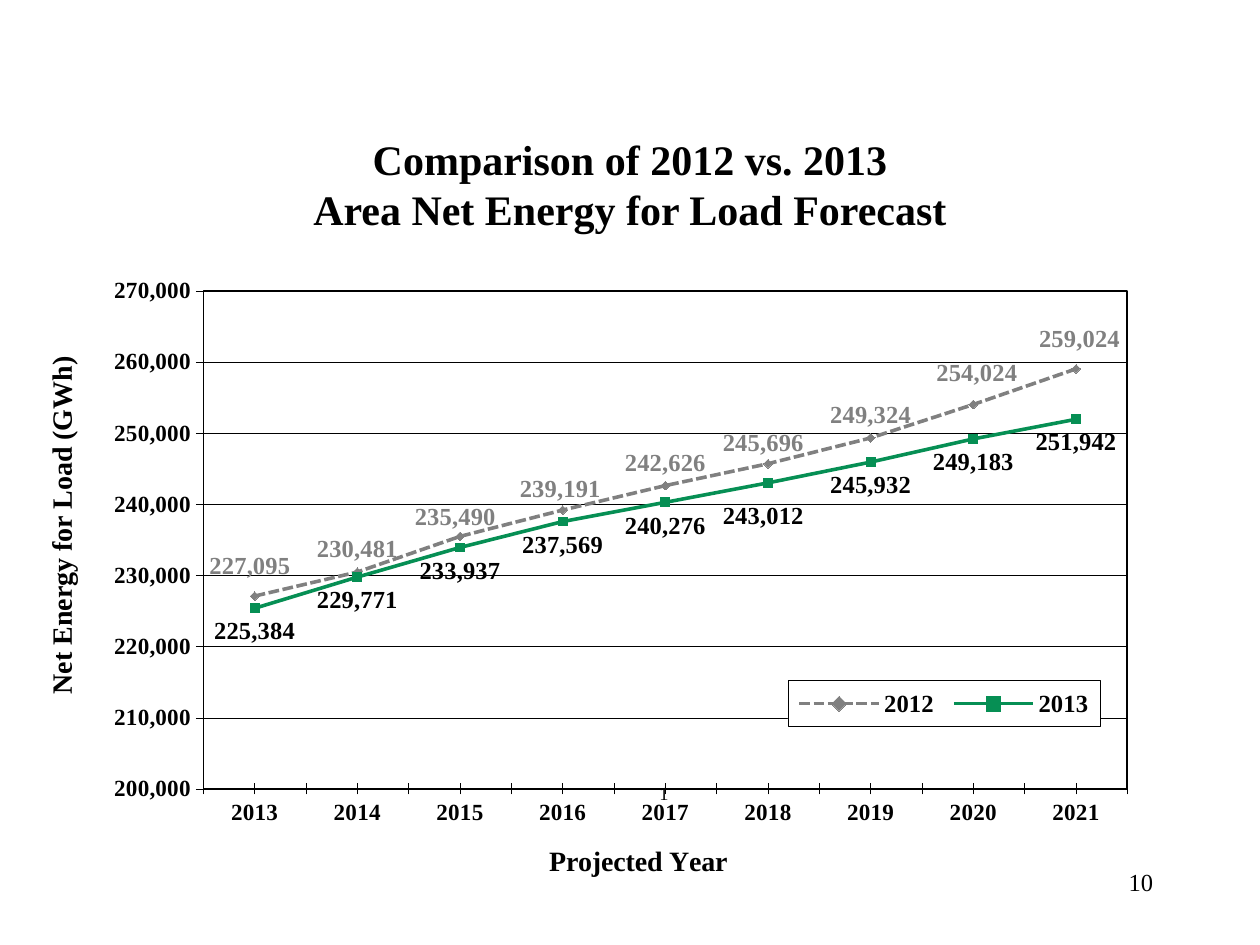
import pptx
import pptx.chart.data
import pptx.dml.color
import pptx.enum.chart
import pptx.enum.dml
import pptx.enum.text
import pptx.oxml
import pptx.oxml.ns
import pptx.util
from pptx.util import Inches, Pt

FONT = "Times New Roman"
HUES = {"ink": "000000", "gray": "808080", "green": "068F54", "page": "FFFFFF"}
enum = pptx.enum.chart
ALIGN = pptx.enum.text.PP_ALIGN
YEARS = [str(year) for year in range(2013, 2022)]
LINES = [
    {"name": "2012", "hue": "gray", "text": "gray", "mark": "DIAMOND",
     "dash": "SQUARE_DOT", "side": "ABOVE",
     "vals": [227095, 230481, 235490, 239191, 242626, 245696, 249324, 254024, 259024],
     "moves": {0: (-0.004, -0.01), 2: (-0.004, 0.005), 3: (-0.002, 0.003),
               5: (-0.004, 0.003), 7: (0.003, -0.013), 8: (0.003, -0.01)}},
    {"name": "2013", "hue": "green", "text": "ink", "mark": "SQUARE",
     "dash": "SOLID", "side": "BELOW",
     "vals": [225384, 229771, 233937, 237569, 240276, 243012, 245932, 249183, 251942],
     "moves": {5: (-0.004, 0.015)}},
]
TEXTS = [
    {"text": "Comparison of 2012 vs. 2013\vArea Net Energy for Load Forecast",
     "at": (0, 1.06, 10, 1.14), "size": 24, "bold": True, "align": ALIGN.CENTER,
     "top": 0},
    {"text": "10", "at": (7.17, 6.83, 2.08, 0.5), "size": 14, "align": ALIGN.RIGHT},
    {"text": "Net Energy for Load (GWh)", "at": (0.3, 2.7, 0.55, 2.94), "size": 16,
     "bold": True, "align": ALIGN.CENTER, "turn": "vert270"},
    {"text": "1", "at": (1.58, 6.16, 7.38, 0.29), "size": 10.5, "align": ALIGN.CENTER},
]


def color(name):
    return pptx.dml.color.RGBColor.from_string(HUES[name])


def style(font, size, hue="ink", bold=True):
    font.name, font.size, font.bold = FONT, Pt(size), bold
    font.color.rgb = color(hue)


def stroke(line, width, hue="ink"):
    line.color.rgb = color(hue)
    line.width = Pt(width)


def fill(form, hue):
    form.fill.solid()
    form.fill.fore_color.rgb = color(hue)


def place(node, after, edge=True, inner=False, **spots):
    for old in node.findall(pptx.oxml.ns.qn("c:layout")):
        node.remove(old)
    tags = '<c:layoutTarget val="inner"/>' if inner else ""
    if edge:
        tags += '<c:xMode val="edge"/><c:yMode val="edge"/>'
    tags += "".join(f'<c:{key} val="{val}"/>' for key, val in spots.items())
    space = pptx.oxml.ns.nsdecls("c")
    layout = pptx.oxml.parse_xml(
        f"<c:layout {space}><c:manualLayout>{tags}</c:manualLayout></c:layout>")
    if after:
        node.find(pptx.oxml.ns.qn(after)).addnext(layout)
    else:
        node.insert(0, layout)


def frame(node, width, after=None, hue=None):
    paint = f'<a:solidFill><a:srgbClr val="{HUES[hue]}"/></a:solidFill>' if hue else "<a:noFill/>"
    shape = pptx.oxml.parse_xml(
        f'<c:spPr {pptx.oxml.ns.nsdecls("c", "a")}>{paint}<a:ln w="{Pt(width)}">'
        f'<a:solidFill><a:srgbClr val="{HUES["ink"]}"/></a:solidFill></a:ln></c:spPr>')
    if after:
        node.find(pptx.oxml.ns.qn(after)).addnext(shape)
    else:
        node.append(shape)


def write(slide, item):
    box = slide.shapes.add_textbox(*map(Inches, item["at"]))
    body = box.text_frame
    body.word_wrap = True
    body.margin_top = Inches(item.get("top", 0.05))
    if "turn" in item:
        body._txBody.bodyPr.set("vert", item["turn"])
    para = body.paragraphs[0]
    para.text = item["text"]
    para.alignment = item["align"]
    style(para.font, item["size"], bold=item.get("bold", False))


def draw(series, item):
    series.smooth = False
    stroke(series.format.line, 2.05, item["hue"])
    series.format.line.dash_style = pptx.enum.dml.MSO_LINE[item["dash"]]
    mark = series.marker
    mark.style, mark.size = enum.XL_MARKER_STYLE[item["mark"]], 5
    fill(mark.format, item["hue"])
    stroke(mark.format.line, 0.75, item["hue"])
    side = enum.XL_LABEL_POSITION[item["side"]]
    labels = series.data_labels
    labels.show_value = True
    labels.number_format, labels.number_format_is_linked = "#,##0", False
    labels.position = side
    style(labels.font, 14, item["text"])
    for leader in labels._element.xpath("c:showLeaderLines"):
        leader.set("val", "0")
    for index, (left, top) in item["moves"].items():
        label = series.points[index].data_label
        style(label.font, 14, item["text"])
        label.position = side
        node = labels._element.xpath(f'c:dLbl[c:idx/@val="{index}"]')[0]
        place(node, "c:idx", edge=False, x=left, y=top)


def plot(slide):
    data = pptx.chart.data.CategoryChartData(number_format="#,##0")
    data.categories = YEARS
    for item in LINES:
        data.add_series(item["name"], item["vals"])
    at = map(Inches, (-0.17, 2.1, 9.39, 5.21))
    chart = slide.shapes.add_chart(enum.XL_CHART_TYPE.LINE_MARKERS, *at, data).chart
    style(chart.font, 18.5)
    chart.has_title = False
    chart.plots[0].vary_by_categories = False
    for series, item in zip(chart.plots[0].series, LINES):
        draw(series, item)

    years, loads = chart.category_axis, chart.value_axis
    for axis in (years, loads):
        style(axis.tick_labels.font, 13.2)
        stroke(axis.format.line, 0.25)
    years.major_tick_mark = enum.XL_TICK_MARK.NONE
    years.minor_tick_mark = enum.XL_TICK_MARK.CROSS
    years.has_major_gridlines = False
    title = years.axis_title
    title.text_frame.text = "Projected Year"
    style(title.text_frame.paragraphs[0].font, 16)
    place(title._element, "c:tx", x=0.478, y=0.873)

    loads.minimum_scale, loads.maximum_scale, loads.major_unit = 200000, 270000, 10000
    loads.major_tick_mark = enum.XL_TICK_MARK.OUTSIDE
    loads.tick_labels.number_format = "#,##0"
    loads.tick_labels.number_format_is_linked = False
    loads.has_major_gridlines = True
    stroke(loads.major_gridlines.format.line, 0.25)

    chart.has_legend = True
    legend = chart.legend
    legend.position = enum.XL_LEGEND_POSITION.RIGHT
    legend.include_in_layout = False
    style(legend.font, 14.1)
    place(legend._element, "c:legendPos", x=0.684, y=0.634, w=0.264, h=0.07)
    area = chart._chartSpace.chart.plotArea
    place(area, None, inner=True, x=0.19, y=0.04, w=0.781, h=0.759)
    frame(area, 1)
    frame(legend._element, 0.25, "c:overlay", "page")


def main():
    deck = pptx.Presentation()
    deck.slide_width, deck.slide_height = Inches(10), Inches(7.5)
    slide = deck.slides.add_slide(deck.slide_layouts[6])
    plot(slide)
    for item in TEXTS:
        write(slide, item)
    deck.save("out.pptx")


if __name__ == "__main__":
    main()
